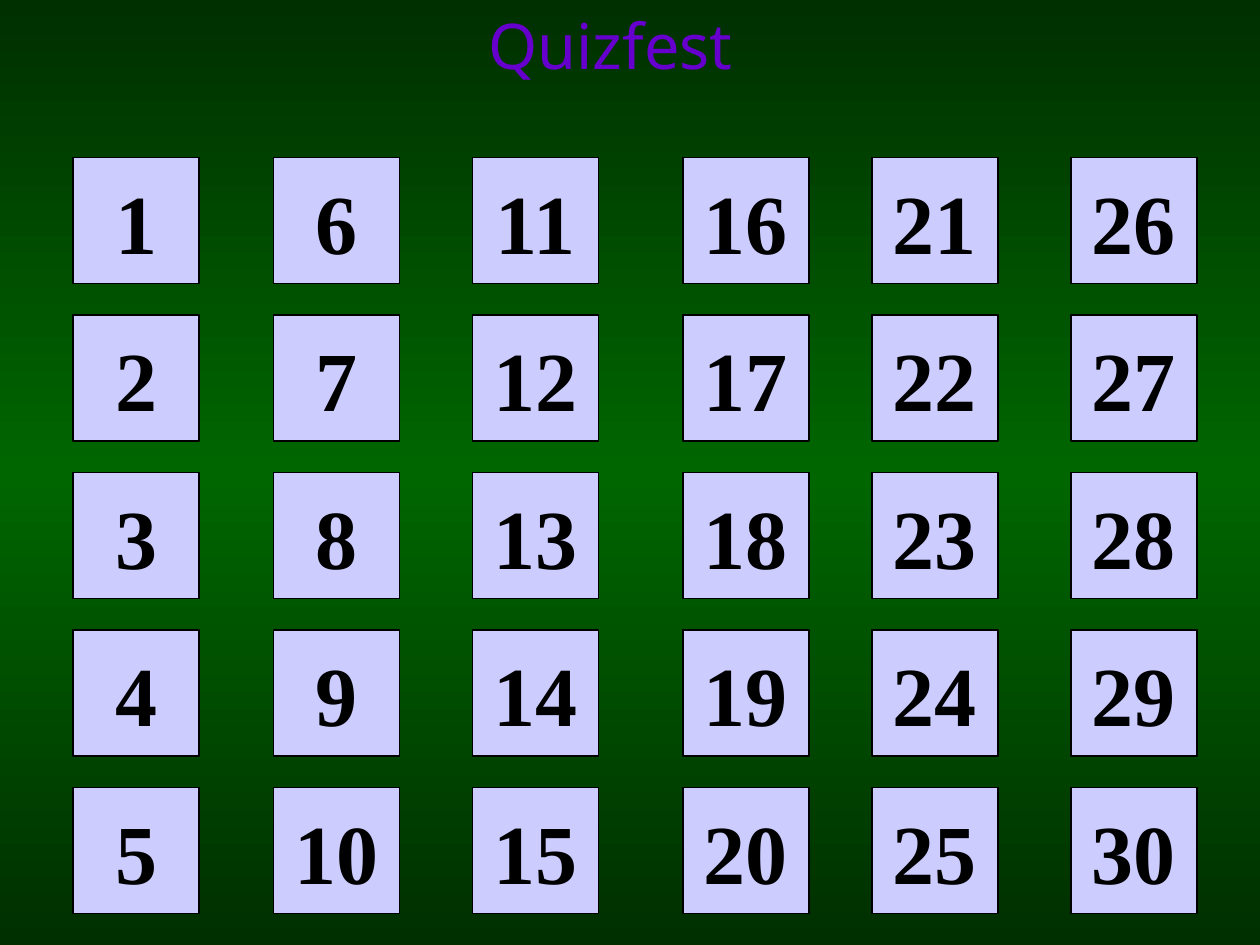
from copy import deepcopy

from lxml.etree import SubElement
from pptx import Presentation
from pptx.dml.color import RGBColor
from pptx.enum.shapes import MSO_SHAPE
from pptx.enum.text import MSO_ANCHOR, PP_ALIGN
from pptx.oxml.ns import qn
from pptx.util import Inches, Pt

COLORS = {
    "edge": "002F00",
    "middle": "006600",
    "tile": "CCCCFF",
    "ink": "000000",
    "title_top": "6600CC",
    "title_end": "CC00CC",
    "outline": "CC99FF",
}
LEFTS = [0.58, 2.17, 3.75, 5.42, 6.92, 8.5]
ROWS = 5
TOP, STEP, SIZE = 1.25, 1.25, 1


def color(name):
    return RGBColor.from_string(COLORS[name])


def set_stops(fill, stops):
    """Color the stops of a gradient that runs from top to bottom."""
    fill.gradient_angle = 270
    for stop, (place, name) in zip(fill.gradient_stops, stops):
        stop.position = place
        stop.color.rgb = color(name)


def paint_back(slide):
    fill = slide.background.fill
    fill.gradient()
    stops = next(slide.element.iter(qn("a:gsLst")))
    stops.append(deepcopy(stops[-1]))
    set_stops(fill, [(0, "edge"), (0.5, "middle"), (1, "edge")])


def add_outline(run, name, width):
    props = run.font._element
    line = SubElement(props, qn("a:ln"), w=str(Pt(width)))
    fill = SubElement(line, qn("a:solidFill"))
    SubElement(fill, qn("a:srgbClr"), val=COLORS[name])
    props.insert(0, line)


def set_text(shape, text, font, size, anchor):
    """Fill in one centered line and return its run."""
    frame = shape.text_frame
    frame.text = text
    frame.word_wrap = False
    frame.vertical_anchor = anchor
    para = frame.paragraphs[0]
    para.alignment = PP_ALIGN.CENTER
    run = para.runs[0]
    run.font.name = font
    run.font.size = Pt(size)
    return run


def add_title(slide, text):
    title = slide.shapes.title
    title.left, title.top = Inches(3.75), Inches(0)
    title.width, title.height = Inches(2.19), Inches(1.27)
    run = set_text(title, text, "Noto Sans", 36, MSO_ANCHOR.TOP)
    run.font.fill.gradient()
    set_stops(run.font.fill, [(0, "title_top"), (1, "title_end")])
    add_outline(run, "outline", 0.75)


def add_tile(slide, left, top, number):
    tile = slide.shapes.add_shape(
        MSO_SHAPE.ACTION_BUTTON_CUSTOM,
        Inches(left), Inches(top), Inches(SIZE), Inches(SIZE),
    )
    tile.shadow.inherit = False
    tile.fill.solid()
    tile.fill.fore_color.rgb = color("tile")
    tile.line.color.rgb = color("ink")
    tile.line.width = Pt(0.75)
    run = set_text(tile, str(number), "Times New Roman", 48, MSO_ANCHOR.MIDDLE)
    run.font.bold = True
    run.font.color.rgb = color("ink")


def main():
    deck = Presentation()
    deck.slide_width, deck.slide_height = Inches(10), Inches(7.5)
    slide = deck.slides.add_slide(deck.slide_layouts[5])
    paint_back(slide)
    for col, left in enumerate(LEFTS):
        for row in range(ROWS):
            add_tile(slide, left, TOP + row * STEP, col * ROWS + row + 1)
    add_title(slide, "Quizfest")
    deck.save("out.pptx")


if __name__ == "__main__":
    main()
